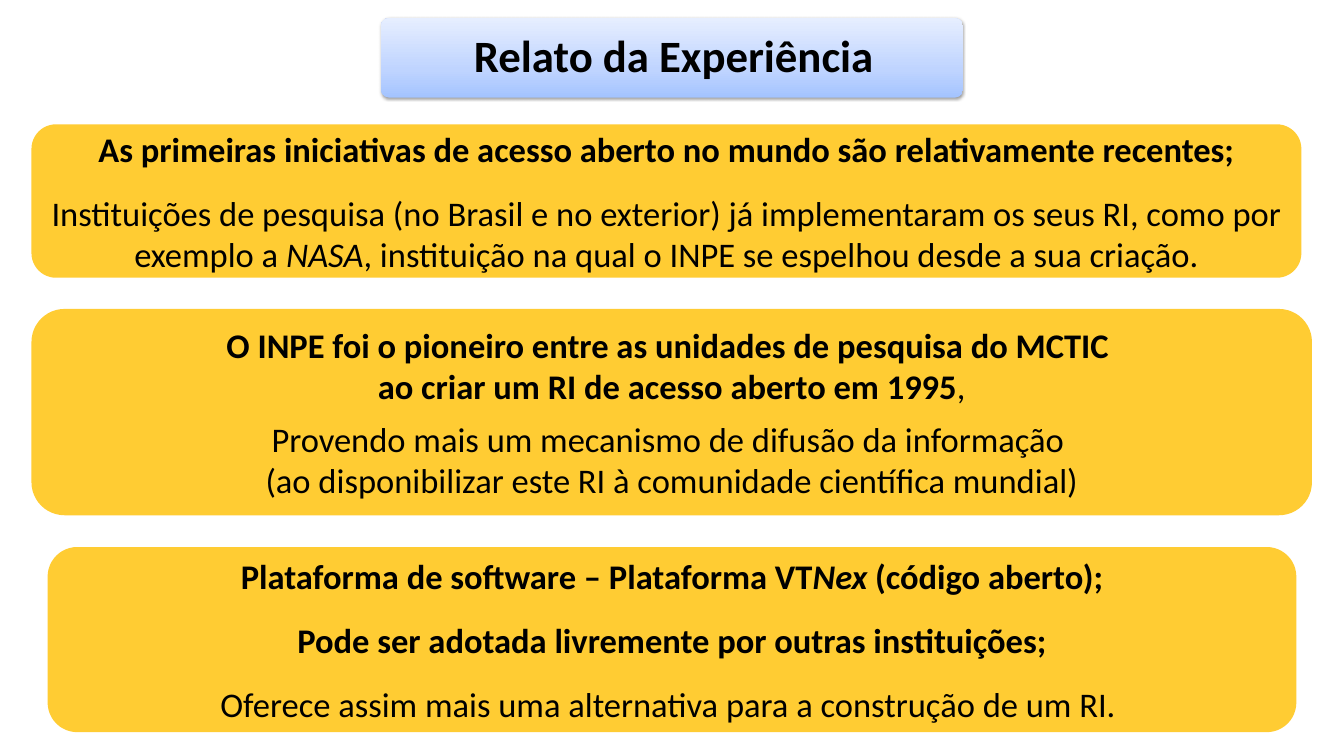
from copy import deepcopy
from dataclasses import dataclass

from lxml import etree
from pptx import Presentation
from pptx.dml.color import RGBColor
from pptx.enum.shapes import MSO_SHAPE
from pptx.enum.text import MSO_ANCHOR, PP_ALIGN
from pptx.oxml import parse_xml
from pptx.oxml.ns import nsdecls, qn
from pptx.util import Cm, Pt


@dataclass(frozen=True)
class Theme:
    font: str = "Calibri"
    text: RGBColor = RGBColor(0, 0, 0)
    panel: RGBColor = RGBColor(0xFF, 0xC0, 0x00)
    panel_alpha: int = 80
    banner: tuple = ((0, "A4C4FF"), (0.35, "BFD4FF"), (1, "E6EEFF"))
    title_size: Pt = Pt(48)
    body_size: Pt = Pt(37)
    gap: Pt = Pt(12)


THEME = Theme()


def style_paragraph(paragraph, size, bold):
    paragraph.alignment = PP_ALIGN.CENTER
    font = paragraph.font
    font.name, font.size, font.bold = THEME.font, size, bold
    font.color.rgb = THEME.text


def add_runs(paragraph, runs):
    """Add (text, format) pairs; a newline in the text is a line break."""
    for text, overrides in runs:
        for i, line in enumerate(text.split("\n")):
            if i:
                paragraph.add_line_break()
            run = paragraph.add_run()
            run.text = line
            for attribute, value in overrides.items():
                setattr(run.font, attribute, value)


prs = Presentation()
prs.slide_width, prs.slide_height = Cm(50.8), Cm(28.58)
slide = prs.slides.add_slide(prs.slide_layouts[6])

# Title banner
banner = slide.shapes.add_shape(
    MSO_SHAPE.ROUNDED_RECTANGLE, Cm(14.4), Cm(0.69), Cm(22), Cm(3))
banner.adjustments[0] = 0.1
banner.line.fill.background()
banner.fill.gradient()
banner.fill.gradient_angle = 90
stop_list = banner.fill.gradient_stops
first_stop = banner._element.spPr.find(".//" + qn("a:gs"))
first_stop.addnext(deepcopy(first_stop))
for stop, (position, color) in zip(banner.fill.gradient_stops, THEME.banner):
    stop.position = position
    stop.color.rgb = RGBColor.from_string(color)
banner._element.spPr.append(parse_xml(
    f'<a:effectLst {nsdecls("a")}>'
    '<a:outerShdw blurRad="39400" dist="20300" dir="5400000" rotWithShape="0">'
    '<a:srgbClr val="000000"><a:alpha val="38000"/></a:srgbClr>'
    '</a:outerShdw></a:effectLst>'))

title = slide.shapes.add_textbox(Cm(14.6), Cm(0.91), Cm(21.74), Cm(2.57))
title_frame = title.text_frame
title_frame.word_wrap = True
title_frame.vertical_anchor = MSO_ANCHOR.MIDDLE
heading = title_frame.paragraphs[0]
heading.text = "Relato da Experiência"
heading.line_spacing = 0.9
style_paragraph(heading, THEME.title_size, True)

# Panels: left, top, width, height in cm; paragraphs as (bold, spaced, runs)
ITALIC = {"italic": True}
panels = [
    ((1.19, 4.7, 48, 5.8), [
        (True, True, [("As primeiras iniciativas de acesso aberto no mundo são "
                       "relativamente recentes;", {})]),
        (False, True, [("Instituições de pesquisa (no Brasil e no exterior) já "
                        "implementaram os seus RI, como por exemplo a ", {}),
                       ("NASA", ITALIC),
                       (", instituição na qual o INPE se espelhou desde a sua "
                        "criação.", {})]),
    ]),
    ((1.19, 11.68, 48.4, 7.8), [
        (True, False, [("O INPE foi o pioneiro entre as unidades de pesquisa do "
                        "MCTIC \nao criar um RI de acesso aberto em 1995", {}),
                       (",", {"bold": False})]),
        (False, True, [("Provendo mais um mecanismo de difusão da informação \n"
                        "(ao disponibilizar este RI à comunidade científica "
                        "mundial)", {})]),
    ]),
    ((1.8, 20.68, 47.2, 7), [
        (True, True, [("Plataforma de software – Plataforma VT", {}),
                      ("Nex ", ITALIC),
                      ("(código aberto);", {})]),
        (True, True, [("Pode ser adotada livremente por outras instituições;", {})]),
        (False, True, [("Oferece assim mais uma alternativa para a construção de "
                        "um RI. ", {})]),
    ]),
]

for bounds, statements in panels:
    panel = slide.shapes.add_shape(
        MSO_SHAPE.ROUNDED_RECTANGLE, *(Cm(length) for length in bounds))
    panel.adjustments[0] = 0.16
    panel.shadow.inherit = False
    panel.line.fill.background()
    panel.fill.solid()
    panel.fill.fore_color.rgb = THEME.panel
    fill_color = panel._element.spPr.find(qn("a:solidFill")).find(qn("a:srgbClr"))
    etree.SubElement(fill_color, qn("a:alpha")).set(
        "val", str(THEME.panel_alpha * 1000))

    frame = panel.text_frame
    frame.word_wrap = True
    frame.vertical_anchor = MSO_ANCHOR.MIDDLE
    for i, (bold, spaced, runs) in enumerate(statements):
        paragraph = frame.add_paragraph() if i else frame.paragraphs[0]
        style_paragraph(paragraph, THEME.body_size, bold)
        if spaced:
            paragraph.space_before = paragraph.space_after = THEME.gap
        add_runs(paragraph, runs)

prs.save("out.pptx")
